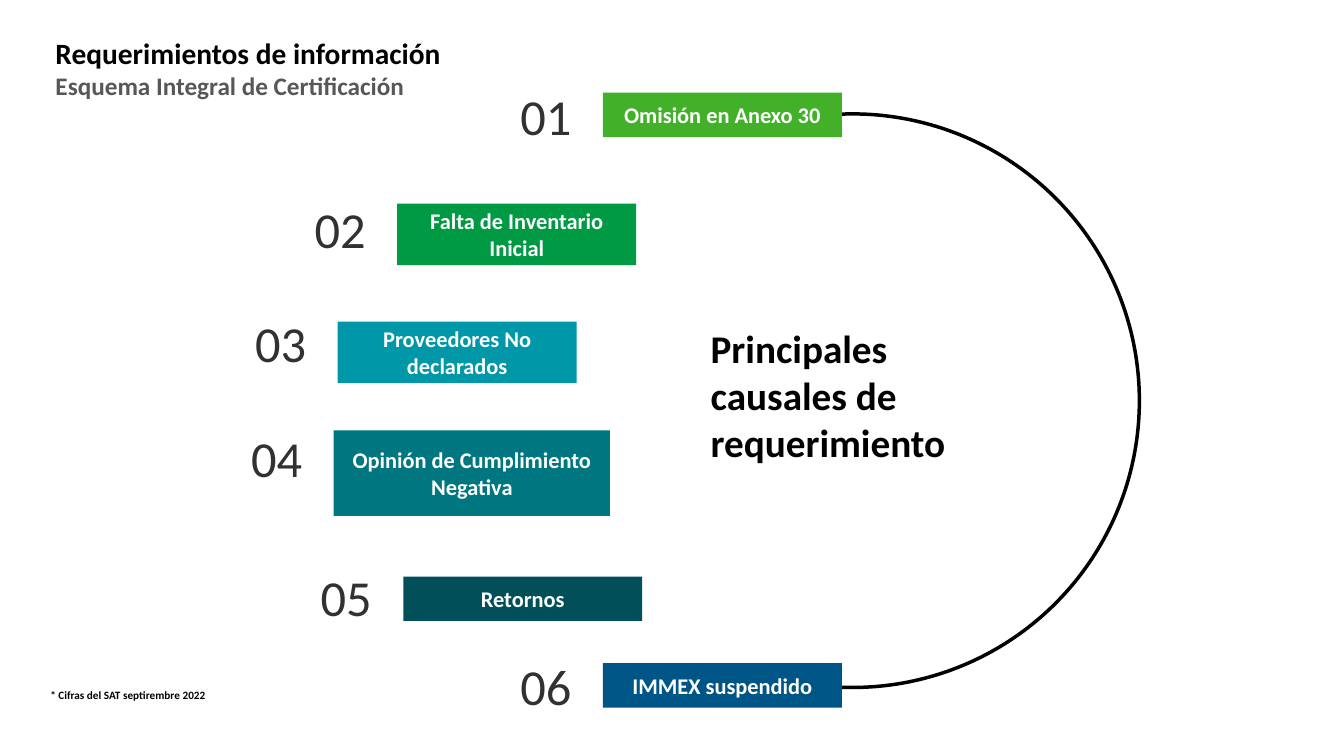
import pptx
import pptx.util
import pptx.dml.color
import pptx.enum.shapes
import pptx.enum.text

WIDTH, HEIGHT = 13.33, 7.5
FONT = "Calibri"
COLOURS = {
    "black": "000000", "grey": "575757", "number": "313131", "white": "FFFFFF",
    "lime": "43B02A", "green": "009A44", "aqua": "0097A9",
    "teal": "007680", "pine": "004F59", "blue": "005587",
}
NUMBER_GAP = 6.15
CAUSES = [
    ("Omisión en Anexo 30", "lime", (44.86, 12.27, 17.78, 5.87), 11.2),
    ("Falta de Inventario Inicial", "green", (29.56, 26.93, 17.78, 8.13), 26.27),
    ("Proveedores No declarados", "aqua", (25.13, 42.53, 17.78, 8.13), 41.33),
    ("Opinión de Cumplimiento Negativa", "teal", (24.83, 56.93, 20.56, 11.33), 56.53),
    ("Retornos", "pine", (30.01, 76.27, 17.78, 5.87), 74.93),
    ("IMMEX suspendido", "blue", (44.86, 87.73, 17.78, 5.87), 86.67),
]


def colour(name):
    return pptx.dml.color.RGBColor.from_string(COLOURS[name])


def place(area):
    """Turn percentages of the slide's width and height into lengths."""
    left, top, width, height = area
    return [pptx.util.Inches(share * side / 100) for share, side in
            ((left, WIDTH), (top, HEIGHT), (width, WIDTH), (height, HEIGHT))]


def style(span, size, name, bold=True):
    span.font.name = FONT
    span.font.size = pptx.util.Pt(size)
    span.font.bold = bold
    span.font.color.rgb = colour(name)


def set_margins(frame, inches):
    margin = pptx.util.Inches(inches)
    frame.margin_left = frame.margin_right = margin
    frame.margin_top = frame.margin_bottom = margin


def add_text(page, area, text, size, name="black", bold=True):
    box = page.shapes.add_textbox(*place(area))
    box.text_frame.word_wrap = True
    para = box.text_frame.paragraphs[0]
    para.text = text
    for span in para.runs:
        style(span, size, name, bold)
    return box.text_frame


def add_title(page):
    frame = add_text(page, (4.13, 4.67, 91.82, 10.13),
                     "Requerimientos de información\vEsquema Integral de Certificación", 21)
    set_margins(frame, 0)
    style(frame.paragraphs[0].runs[1], 18, "grey")


def add_arc(page):
    arc = page.shapes.add_shape(pptx.enum.shapes.MSO_SHAPE.ARC,
                                *place((42.09, 15.07, 42.69, 75.87)))
    arc.adjustments[0] = 159.6
    arc.adjustments[1] = 56.4
    arc.shadow.inherit = False
    arc.fill.background()
    arc.line.color.rgb = colour("black")
    arc.line.width = pptx.util.Pt(2.5)


def add_cause(page, number, text, fill, area, number_top):
    box = page.shapes.add_shape(pptx.enum.shapes.MSO_SHAPE.RECTANGLE, *place(area))
    box.shadow.inherit = False
    box.fill.solid()
    box.fill.fore_color.rgb = colour(fill)
    box.line.fill.background()
    frame = box.text_frame
    frame.word_wrap = True
    frame.vertical_anchor = pptx.enum.text.MSO_ANCHOR.MIDDLE
    set_margins(frame, 0.1)
    para = frame.paragraphs[0]
    para.text = text
    para.alignment = pptx.enum.text.PP_ALIGN.CENTER
    style(para.runs[0], 16, "white")
    label = add_text(page, (area[0] - NUMBER_GAP, number_top, 6.6, 8.13),
                     f"{number:02}", 36, "number", False)
    set_margins(label, 0)


def main():
    deck = pptx.Presentation()
    deck.slide_width = pptx.util.Inches(WIDTH)
    deck.slide_height = pptx.util.Inches(HEIGHT)
    page = deck.slides.add_slide(deck.slide_layouts[6])
    add_title(page)
    add_arc(page)
    add_text(page, (52.14, 42.27, 25.13, 24.27), "Principales causales de requerimiento", 28)
    for number, cause in enumerate(CAUSES, 1):
        add_cause(page, number, *cause)
    add_text(page, (3, 90.4, 25.13, 7.2), "* Cifras del SAT septirembre 2022", 8)
    deck.save("out.pptx")


if __name__ == "__main__":
    main()
